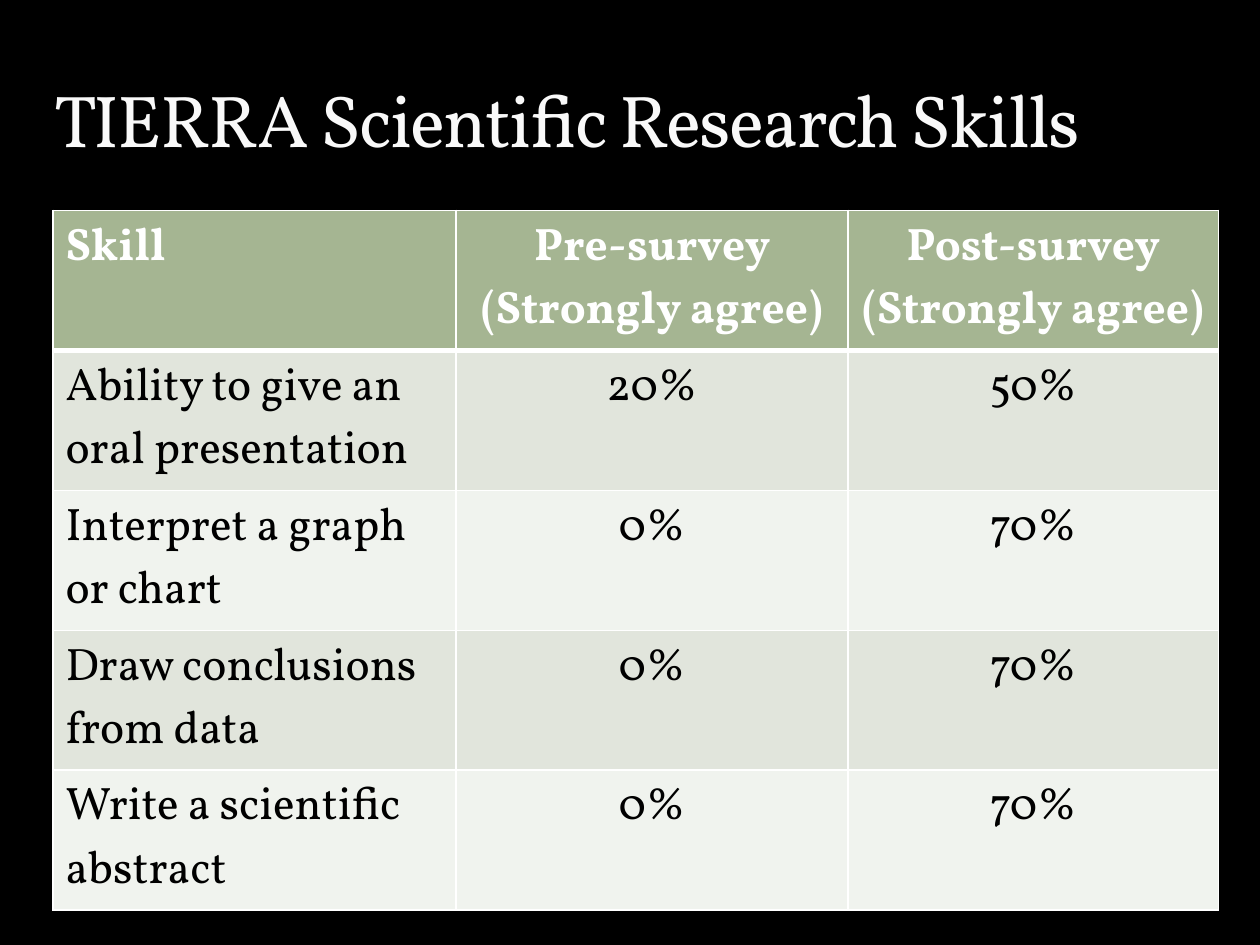
from lxml import etree
from pptx import Presentation
from pptx.dml.color import RGBColor
from pptx.enum.text import MSO_ANCHOR, PP_ALIGN
from pptx.oxml import parse_xml
from pptx.oxml.ns import nsdecls, qn
from pptx.util import Inches, Pt

LEFT, CENTER = PP_ALIGN.LEFT, PP_ALIGN.CENTER
BOTTOM = MSO_ANCHOR.BOTTOM
TITLE_ONLY = 5

FONT = "Vollkorn"
WHITE, BLACK = "FFFFFF", "000000"
HEADER_FILL = "A5B592"
BAND_FILLS = ["E1E5DC", "F0F3EE"]

COLUMN_WIDTHS = [3.2, 3.11, 2.94]
ROW_HEIGHTS = [0.74, 0.95, 1.06, 1.06, 1.06]
SURVEY = [
    ["Skill", "Pre-survey (Strongly agree)", "Post-survey (Strongly agree)"],
    ["Ability to give an oral presentation", "20%", "50%"],
    ["Interpret a graph or chart", "0%", "70%"],
    ["Draw conclusions from data", "0%", "70%"],
    ["Write a scientific abstract", "0%", "70%"],
]


def rgb(hex_color):
    return RGBColor.from_string(hex_color)


def format_span(span, size, color, bold=False):
    span.font.name = FONT
    span.font.size = Pt(size)
    span.font.bold = bold
    span.font.color.rgb = rgb(color)


def outline_span(span, color, width, alpha):
    """Give the letters a thin outline; alpha is a percentage."""
    span.font._element.insert(0, parse_xml(
        f'<a:ln {nsdecls("a")} w="{Pt(width)}"><a:solidFill><a:srgbClr val="{color}">'
        f'<a:alpha val="{alpha * 1000}"/></a:srgbClr></a:solidFill></a:ln>'))


def set_borders(cell, bottom_width):
    """Draw white borders, 1 point wide except for the bottom one."""
    properties = cell._tc.get_or_add_tcPr()
    widths = {"a:lnL": 1, "a:lnR": 1, "a:lnT": 1, "a:lnB": bottom_width}
    for index, (tag, width) in enumerate(widths.items()):
        line = etree.Element(qn(tag), w=str(Pt(width)))
        fill = etree.SubElement(line, qn("a:solidFill"))
        etree.SubElement(fill, qn("a:srgbClr"), val=WHITE)
        properties.insert(index, line)


def add_title(page, text):
    title = page.shapes.title
    title.left, title.top = Inches(0.33), Inches(0.17)
    title.width, title.height = Inches(9.42), Inches(1.17)
    frame = title.text_frame
    frame.text = text
    frame.word_wrap = True
    frame.vertical_anchor = BOTTOM
    para = frame.paragraphs[0]
    para.alignment = LEFT
    span = para.runs[0]
    format_span(span, 42, "F9F9F9")
    span.font._element.set("spc", "-100")
    outline_span(span, "3C4422", 0.25, 25)


def fill_cell(cell, text, alignment, fill, color, is_header):
    cell.text_frame.text = text
    para = cell.text_frame.paragraphs[0]
    para.alignment = alignment
    format_span(para.runs[0], 26, color, bold=is_header)
    cell.fill.solid()
    cell.fill.fore_color.rgb = rgb(fill)


def add_survey_table(page):
    frame = page.shapes.add_table(
        len(SURVEY), len(COLUMN_WIDTHS), Inches(0.42), Inches(1.67),
        Inches(sum(COLUMN_WIDTHS)), Inches(sum(ROW_HEIGHTS)))
    table = frame.table
    for column, width in zip(table.columns, COLUMN_WIDTHS):
        column.width = Inches(width)
    for row, height in zip(table.rows, ROW_HEIGHTS):
        row.height = Inches(height)
    for r, texts in enumerate(SURVEY):
        is_header = r == 0
        fill = HEADER_FILL if is_header else BAND_FILLS[(r - 1) % 2]
        color = WHITE if is_header else BLACK
        for c, text in enumerate(texts):
            cell = table.cell(r, c)
            fill_cell(cell, text, CENTER if c else LEFT, fill, color, is_header)
            set_borders(cell, bottom_width=3 if is_header else 1)


def main():
    deck = Presentation()
    deck.slide_width, deck.slide_height = Inches(10), Inches(7.5)
    page = deck.slides.add_slide(deck.slide_layouts[TITLE_ONLY])
    page.background.fill.solid()
    page.background.fill.fore_color.rgb = rgb(BLACK)
    add_title(page, "TIERRA Scientific Research Skills")
    add_survey_table(page)
    deck.save("out.pptx")


if __name__ == "__main__":
    main()
